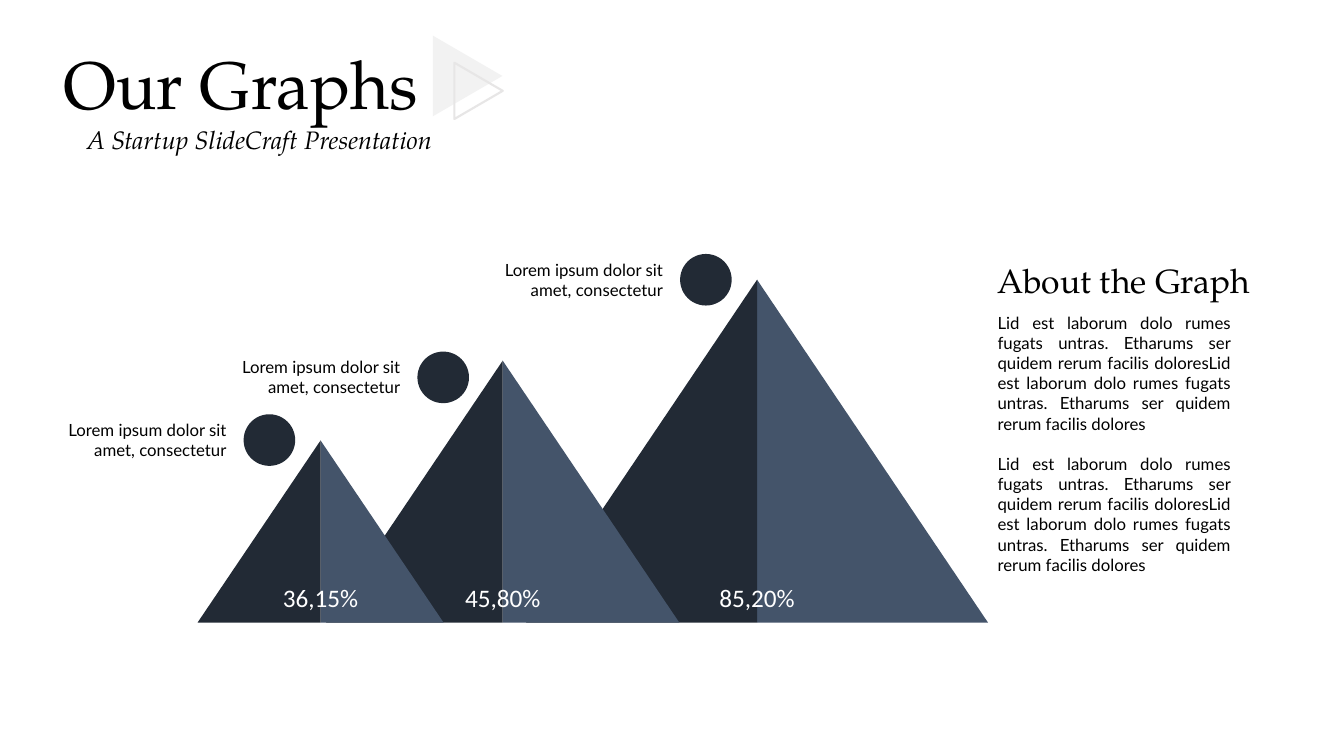
import pptx
import pptx.util
import pptx.dml.color
import pptx.enum.shapes
import pptx.enum.text

Cm = pptx.util.Cm
SHAPE = pptx.enum.shapes.MSO_SHAPE
ALIGN = pptx.enum.text.PP_ALIGN

SERIF, SANS, NUMBERS = "TeX Gyre Pagella", "Lato", "Calibri"
DARK, SLATE, PALE, GREY = "222A35", "44546A", "F2F2F2", "E7E6E6"

TITLE = "Our Graphs"
SUBTITLE = "A Startup SlideCraft Presentation"
ABOUT = "About the Graph"
CAPTION = "Lorem ipsum dolor sit amet, consectetur"
BODY = ["Lid est laborum dolo rumes fugats untras. Etharums ser quidem rerum "
        "facilis doloresLid est laborum dolo rumes fugats untras. Etharums ser "
        "quidem rerum facilis dolores"] * 2

PEAKS = [
    {"value": "85,20%", "apex": 19.08, "half": 5.82, "height": 8.64, "dot": (17.14, 6.4)},
    {"value": "45,80%", "apex": 12.67, "half": 4.45, "height": 6.6, "dot": (10.52, 8.86)},
    {"value": "36,15%", "apex": 8.08, "half": 3.1, "height": 4.59, "dot": (6.14, 10.44)},
]
BASE = 15.69
DOT = 1.3
LABEL_TOP, LABEL_W, LABEL_H = 14.54, 2.44, 1.02
CAPTION_W, CAPTION_H, CAPTION_GAP = 5.03, 1.28, 0.18

prs = pptx.Presentation()
prs.slide_width, prs.slide_height = Cm(33.87), Cm(19.05)
s = prs.slides.add_slide(prs.slide_layouts[6])


def color(value):
    return pptx.dml.color.RGBColor.from_string(value)


def add_shape(kind, x, y, w, h, fill=None, line=None, rotation=0, flip=False):
    sp = s.shapes.add_shape(kind, Cm(x), Cm(y), Cm(w), Cm(h))
    sp.shadow.inherit = False
    sp.rotation = rotation
    if fill:
        sp.fill.solid()
        sp.fill.fore_color.rgb = color(fill)
    else:
        sp.fill.background()
    if line:
        sp.line.color.rgb = color(line)
        sp.line.width = pptx.util.Pt(1.5)
    else:
        sp.line.fill.background()
    if flip:
        sp._element.spPr.get_or_add_xfrm().set("flipH", "1")


def add_text(paragraphs, x, y, w, h, font=SANS, size=12, fill="000000",
             align=ALIGN.LEFT, italic=False, wrap=True, gap=0):
    tf = s.shapes.add_textbox(Cm(x), Cm(y), Cm(w), Cm(h)).text_frame
    tf.word_wrap = wrap
    for i, text in enumerate(paragraphs):
        p = tf.add_paragraph() if i else tf.paragraphs[0]
        p.alignment = align
        p.space_before = pptx.util.Pt(gap if i else 0)
        r = p.add_run()
        r.text = text
        r.font.name, r.font.size, r.font.italic = font, pptx.util.Pt(size), italic
        r.font.color.rgb = color(fill)


for peak in PEAKS:
    apex, half, height = peak["apex"], peak["half"], peak["height"]
    top = BASE - height
    add_shape(SHAPE.RIGHT_TRIANGLE, apex, top, half, height, fill=SLATE)
    add_shape(SHAPE.RIGHT_TRIANGLE, apex - half, top, half, height, fill=DARK, flip=True)

for peak in PEAKS:
    add_text([peak["value"]], peak["apex"] - LABEL_W / 2, LABEL_TOP, LABEL_W, LABEL_H,
             font=NUMBERS, size=18, fill="FFFFFF", align=ALIGN.CENTER, wrap=False)
    x, y = peak["dot"]
    add_shape(SHAPE.OVAL, x, y, DOT, DOT, fill=DARK)
    add_text([CAPTION], x - CAPTION_GAP - CAPTION_W, y + (DOT - CAPTION_H) / 2,
             CAPTION_W, CAPTION_H, align=ALIGN.RIGHT)

add_text([TITLE], 1.35, 0.94, 16.38, 2.31, font=SERIF, size=48)
add_text([SUBTITLE], 0, 3, 13.08, 1.02, font=SERIF, size=18, align=ALIGN.CENTER, italic=True)
add_shape(SHAPE.ISOSCELES_TRIANGLE, 10.77, 1.04, 2.03, 1.75, fill=PALE, rotation=90)
add_shape(SHAPE.ISOSCELES_TRIANGLE, 11.35, 1.68, 1.42, 1.22, line=GREY, rotation=90)
add_text([ABOUT], 24.89, 6.43, 7.16, 1.27, font=SERIF, size=24)
add_text(BODY, 24.89, 7.75, 6.38, 8.46, align=ALIGN.JUSTIFY, gap=14.4)

prs.save("out.pptx")
